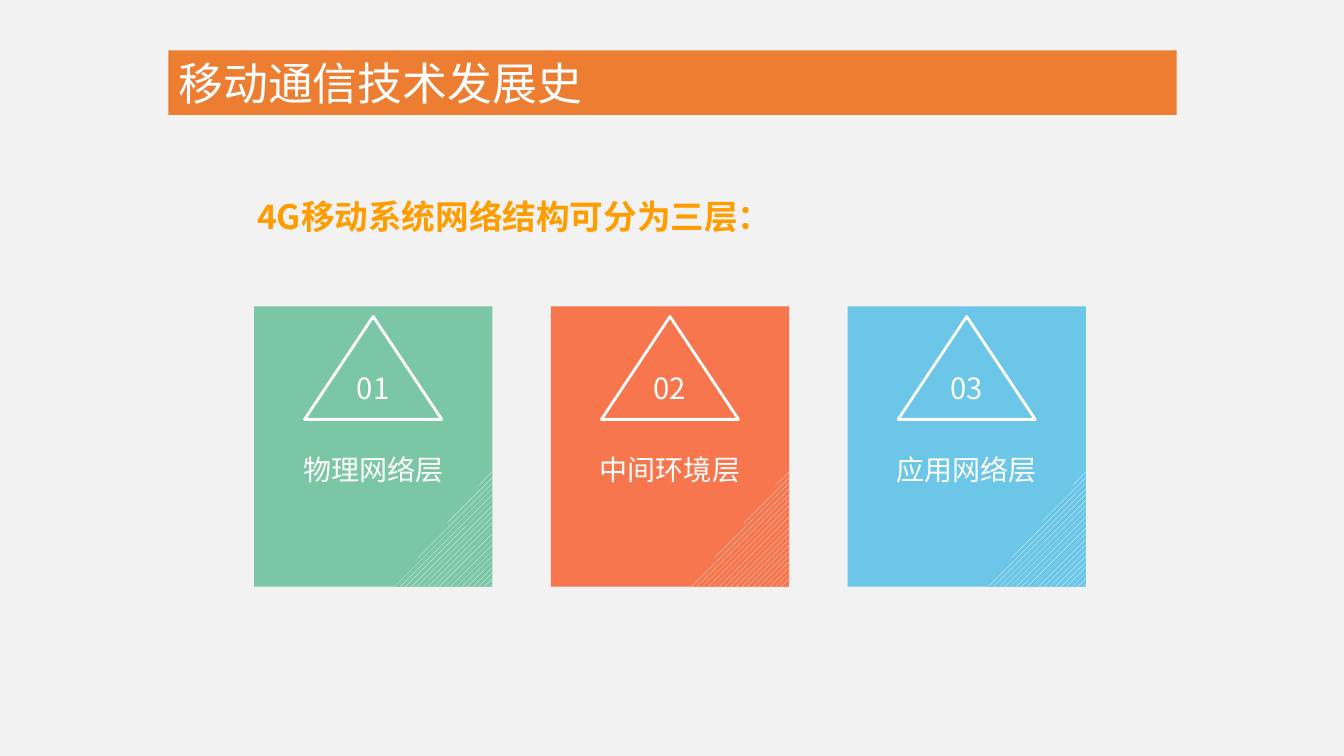
import pptx
import pptx.dml.color
import pptx.enum.dml
import pptx.enum.shapes
import pptx.enum.text
import pptx.oxml.ns
import pptx.util
import lxml.etree

Inches = pptx.util.Inches
Shapes = pptx.enum.shapes.MSO_SHAPE
Align = pptx.enum.text.PP_ALIGN

FONT = "Noto Sans CJK SC"
WHITE = "FFFFFF"
LAYERS = [
    ("01", "物理网络层", "7BC6A5"),
    ("02", "中间环境层", "F7764E"),
    ("03", "应用网络层", "6BC6E8"),
]


def color(hex_string):
    return pptx.dml.color.RGBColor.from_string(hex_string)


def paint(shape, hex_string):
    shape.fill.solid()
    shape.fill.fore_color.rgb = color(hex_string)


def write(shape, text, size, hex_string, align=Align.LEFT, bold=False):
    """Put one middle-anchored paragraph in the shape and return it."""
    frame = shape.text_frame
    frame.word_wrap = True
    frame.vertical_anchor = pptx.enum.text.MSO_ANCHOR.MIDDLE
    paragraph = frame.paragraphs[0]
    paragraph.text = text
    paragraph.alignment = align
    font = paragraph.font
    font.name, font.size, font.bold = FONT, pptx.util.Pt(size), bold
    font.color.rgb = color(hex_string)
    # The East Asian typeface has no public setter
    qn = pptx.oxml.ns.qn
    properties = next(paragraph._p.iter(qn("a:defRPr")))
    lxml.etree.SubElement(properties, qn("a:ea")).set("typeface", FONT)
    return paragraph


def add_plain_shape(shapes, kind, left, top, width, height):
    shape = shapes.add_shape(
        kind, Inches(left), Inches(top), Inches(width), Inches(height))
    shape.shadow.inherit = False
    shape.line.fill.background()
    return shape


def add_title(slide, left, top, width, height):
    title = slide.shapes.title
    title.left, title.top = Inches(left), Inches(top)
    title.width, title.height = Inches(width), Inches(height)
    paint(title, "ED7D31")
    paragraph = write(title, "移动通信技术发展史", 32, WHITE)
    paragraph.line_spacing = pptx.util.Pt(38.4)
    title.text_frame.auto_size = pptx.enum.text.MSO_AUTO_SIZE.NONE


def add_heading(slide, left, top, width, height):
    box = slide.shapes.add_textbox(
        Inches(left), Inches(top), Inches(width), Inches(height))
    paragraph = write(
        box, "4G移动系统网络结构可分为三层：", 24, "FF9D00", bold=True)
    paragraph.line_spacing = 1.5
    box.text_frame.margin_left = Inches(0.6)
    box.text_frame.vertical_anchor = pptx.enum.text.MSO_ANCHOR.TOP


def add_card(slide, left, top, width, height, number, label, hex_string):
    shapes = slide.shapes.add_group_shape().shapes

    # Background
    panel = add_plain_shape(shapes, Shapes.RECTANGLE, left, top, width, height)
    paint(panel, hex_string)

    # Striped corner at the bottom right
    corner_width, corner_height = 0.98, 1.16
    corner = add_plain_shape(
        shapes, Shapes.RIGHT_TRIANGLE, left + width - corner_width,
        top + height - corner_height, corner_width, corner_height)
    corner.fill.patterned()
    corner.fill.pattern = pptx.enum.dml.MSO_PATTERN.WIDE_UPWARD_DIAGONAL
    corner.fill.fore_color.rgb = color(WHITE)
    corner.fill.back_color.rgb = color(hex_string)
    corner.element.spPr.find(pptx.oxml.ns.qn("a:xfrm")).set("flipH", "1")

    # Numbered triangle
    badge_width = 1.36
    badge = add_plain_shape(
        shapes, Shapes.ISOSCELES_TRIANGLE, left + (width - badge_width) / 2,
        top + 0.1, badge_width, 1.02)
    badge.fill.background()
    badge.line.color.rgb = color(WHITE)
    badge.line.width = pptx.util.Pt(2)
    write(badge, number, 20.9, WHITE, Align.CENTER)
    badge.text_frame.margin_bottom = Inches(0.16)

    # Layer name
    name = shapes.add_textbox(
        Inches(left), Inches(top + 1.24), Inches(width), Inches(0.76))
    write(name, label, 20, WHITE, Align.CENTER)


def add_cards(slide, left, top, width, height, gap):
    card_width = (width - gap * (len(LAYERS) - 1)) / len(LAYERS)
    for index, layer in enumerate(LAYERS):
        card_left = left + index * (card_width + gap)
        add_card(slide, card_left, top, card_width, height, *layer)


def main():
    presentation = pptx.Presentation()
    presentation.slide_width = Inches(13.33)
    presentation.slide_height = Inches(7.5)
    slide = presentation.slides.add_slide(presentation.slide_layouts[5])
    slide.background.fill.solid()
    slide.background.fill.fore_color.rgb = color("F2F2F2")

    add_title(slide, 1.67, 0.5, 10, 0.64)
    add_heading(slide, 1.95, 1.69, 6.58, 0.71)
    add_cards(slide, 2.52, 3.04, 8.25, 2.78, gap=0.58)
    presentation.save("out.pptx")


if __name__ == "__main__":
    main()
